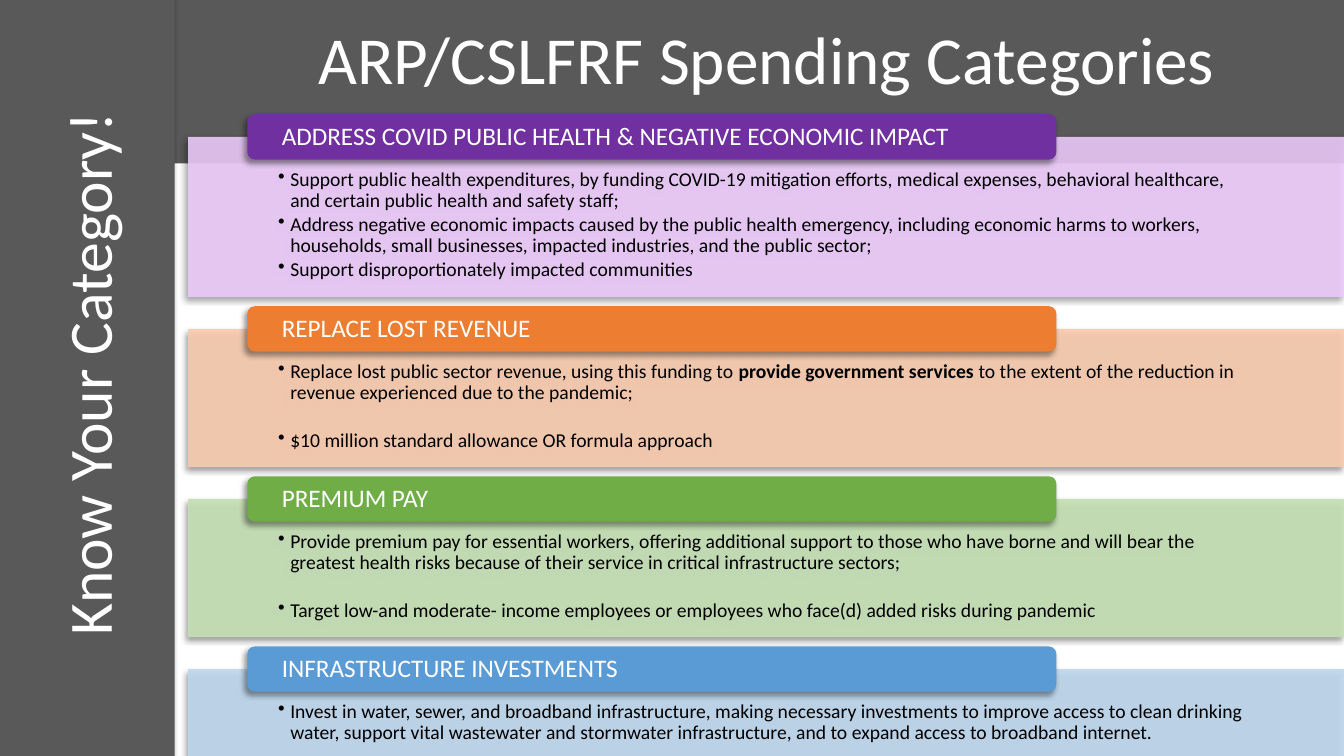
from lxml import etree
from pptx import Presentation
from pptx.dml.color import RGBColor
from pptx.enum.shapes import MSO_SHAPE
from pptx.enum.text import MSO_ANCHOR, PP_ALIGN
from pptx.oxml import parse_xml
from pptx.oxml.ns import nsdecls, qn
from pptx.util import Inches, Pt

RECT, ROUND = MSO_SHAPE.RECTANGLE, MSO_SHAPE.ROUNDED_RECTANGLE
TOP, MID = MSO_ANCHOR.TOP, MSO_ANCHOR.MIDDLE
LEFT, CENTER = PP_ALIGN.LEFT, PP_ALIGN.CENTER

THEME = {
    "font": "Calibri", "gray": "595959", "white": "FFFFFF", "black": "000000",
    "title": 48, "side": 44, "head": 18, "body": 14,
}
SHADOW = (
    f'<a:effectLst {nsdecls("a")}><a:outerShdw blurRad="{Pt(4)}" dist="{Pt(3)}" '
    'dir="8100000" rotWithShape="0"><a:srgbClr val="000000"><a:alpha val="40000"/>'
    '</a:srgbClr></a:outerShdw></a:effectLst>'
)

deck = Presentation()
deck.slide_width, deck.slide_height = Inches(13.33), Inches(7.5)
slide = deck.slides.add_slide(deck.slide_layouts[6])
COL, ROW = deck.slide_width / 100, deck.slide_height / 100


def block(kind, x, y, wide, high, fill, shade=True):
    box = slide.shapes.add_shape(kind, int(x), int(y), int(wide), int(high))
    box.fill.solid()
    box.fill.fore_color.rgb = RGBColor.from_string(fill)
    box.line.fill.background()
    box.shadow.inherit = False
    if shade:
        props = box._element.spPr
        props.replace(props.find(qn("a:effectLst")), parse_xml(SHADOW))
    return box


def write(para, text, size, color, align=LEFT, bold=False):
    para.alignment = align
    run = para.add_run()
    run.text = text
    run.font.name = THEME["font"]
    run.font.size = Pt(THEME[size])
    run.font.bold = bold
    run.font.color.rgb = RGBColor.from_string(THEME[color])


block(RECT, 0, 0, 100 * COL, 21.6 * ROW, THEME["gray"], False)

title = slide.shapes.add_textbox(int(12.3 * COL), 0, int(89.5 * COL), int(16.5 * ROW))
frame = title.text_frame
frame.word_wrap = True
frame.vertical_anchor = MID
frame.paragraphs[0].line_spacing = 0.9
write(frame.paragraphs[0], "ARP/CSLFRF Spending Categories", "title", "white", CENTER)

groups = [
    ("ADDRESS COVID PUBLIC HEALTH & NEGATIVE ECONOMIC IMPACT", "7030A0", "ECCAFA", 21.2, 0, [
        [("Support public health expenditures, by funding COVID-19 mitigation efforts, medical expenses, "
          "behavioral healthcare, and certain public health and safety staff;", False)],
        [("Address negative economic impacts caused by the public health emergency, including economic "
          "harms to workers, households, small businesses, impacted industries, and the public sector;", False)],
        [("Support disproportionately impacted communities", False)],
    ]),
    ("REPLACE LOST REVENUE", "ED7D31", "F8CBAD", 18.3, 17, [
        [("Replace lost public sector revenue, using this funding to ", False),
         ("provide government services ", True),
         ("to the extent of the reduction in revenue experienced due to the pandemic;", False)],
        [("$10 million standard allowance OR formula approach", False)],
    ]),
    ("PREMIUM PAY", "70AD47", "C5E0B4", 18.3, 17, [
        [("Provide premium pay for essential workers, offering additional support to those who have borne "
          "and will bear the greatest health risks because of their service in critical infrastructure "
          "sectors;", False)],
        [("Target low-and moderate- income employees or employees who face(d) added risks during pandemic",
          False)],
    ]),
    ("INFRASTRUCTURE INVESTMENTS", "5B9BD5", "BDD7EE", 11.6, 0, [
        [("Invest in water, sewer, and broadband infrastructure, making necessary investments to improve "
          "access to clean drinking water, support vital wastewater and stormwater infrastructure, and to "
          "expand access to broadband internet.", False)],
    ]),
]

y = 18.1
for head, dark, pale, high, gap, points in groups:
    panel = block(RECT, 14 * COL, y * ROW, 86 * COL, high * ROW, pale)
    tint = panel._element.spPr.find(qn("a:solidFill"))[0]
    etree.SubElement(tint, qn("a:alpha"), val="90000")
    frame = panel.text_frame
    frame.word_wrap = True
    frame.vertical_anchor = TOP
    frame.margin_left = frame.margin_right = int(6.7 * COL)
    frame.margin_top, frame.margin_bottom = int(4.3 * ROW), int(1.5 * ROW)
    for i, point in enumerate(points):
        para = frame.paragraphs[0] if i == 0 else frame.add_paragraph()
        para.line_spacing = 0.9
        para.space_before = Pt(gap if i else 0)
        para.space_after = Pt(2)
        for text, bold in point:
            write(para, text, "body", "black", bold=bold)
        props = para._p.get_or_add_pPr()
        props.set("marL", str(Inches(0.12)))
        props.set("indent", str(-Inches(0.12)))
        etree.SubElement(props, qn("a:buChar"), char="•")

    tab = block(ROUND, 18.4 * COL, (y - 3) * ROW, 60.2 * COL, 6 * ROW, dark)
    frame = tab.text_frame
    frame.word_wrap = True
    frame.vertical_anchor = MID
    frame.margin_left = frame.margin_right = int(2.4 * COL)
    frame.margin_top = frame.margin_bottom = 0
    frame.paragraphs[0].line_spacing = 0.9
    write(frame.paragraphs[0], head, "head", "white")
    y += high + 4.2

long, thick = 101.3 * ROW, 13 * COL
side = block(RECT, 6.5 * COL - long / 2, 49.4 * ROW - thick / 2, long, thick, THEME["gray"])
side.rotation = 270
frame = side.text_frame
frame.word_wrap = True
frame.vertical_anchor = MID
write(frame.paragraphs[0], "Know Your Category!", "side", "white", CENTER)

deck.save("out.pptx")
